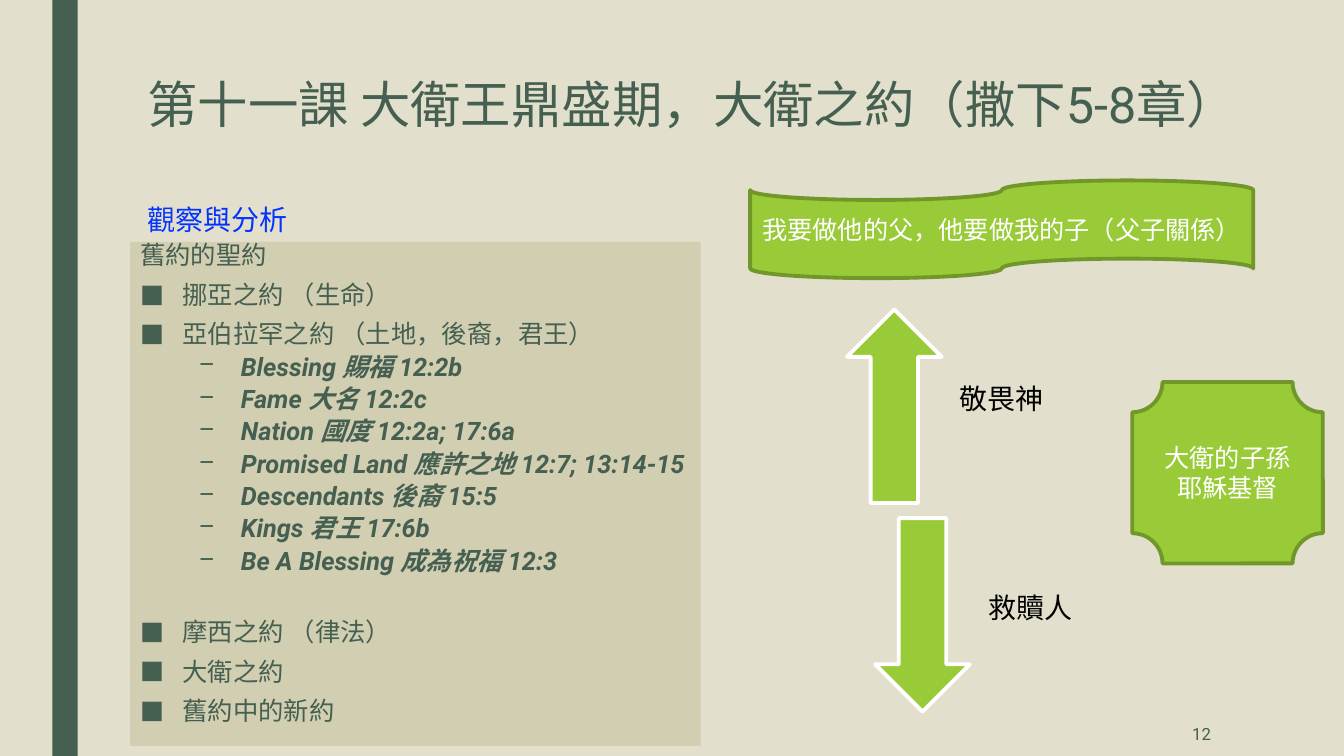
from lxml import etree
from pptx import Presentation
from pptx.dml.color import RGBColor
from pptx.enum.shapes import MSO_SHAPE
from pptx.enum.text import MSO_ANCHOR, MSO_AUTO_SIZE, PP_ALIGN
from pptx.oxml.ns import qn
from pptx.util import Inches, Pt

RECTANGLE, PLAQUE = MSO_SHAPE.RECTANGLE, MSO_SHAPE.PLAQUE
TAPE = MSO_SHAPE.FLOWCHART_PUNCHED_TAPE
UP, DOWN = MSO_SHAPE.UP_ARROW, MSO_SHAPE.DOWN_ARROW
TOP, MIDDLE = MSO_ANCHOR.TOP, MSO_ANCHOR.MIDDLE
LEFT, CENTER, RIGHT = PP_ALIGN.LEFT, PP_ALIGN.CENTER, PP_ALIGN.RIGHT
NO_AUTOFIT = MSO_AUTO_SIZE.NONE

FONT = "Roboto"
COLORS = {
    "background": "E2DFCC", "panel": "D2CEB1", "dark": "455F51",
    "blue": "0432FF", "green": "99CB38", "outline": "719629",
    "white": "FFFFFF", "black": "000000",
}


def add_text(paragraph, text, size, color, alignment=LEFT):
    paragraph.alignment = alignment
    run = paragraph.add_run()
    run.text = text
    run.font.name = FONT
    run.font.size = Pt(size)
    run.font.color.rgb = RGBColor.from_string(COLORS[color])
    return run


def add_filled_shape(kind, box, fill, outline=None):
    shape = slide.shapes.add_shape(kind, *map(Inches, box))
    shape.shadow.inherit = False
    shape.fill.solid()
    shape.fill.fore_color.rgb = RGBColor.from_string(COLORS[fill])
    if outline:
        shape.line.color.rgb = RGBColor.from_string(COLORS[outline])
        shape.line.width = Pt(2.75)
    else:
        shape.line.fill.background()
    return shape


presentation = Presentation()
presentation.slide_width = Inches(13.33)
presentation.slide_height = Inches(7.5)
slide = presentation.slides.add_slide(presentation.slide_layouts[1])

# Background and side bar
slide.background.fill.solid()
slide.background.fill.fore_color.rgb = RGBColor.from_string(COLORS["background"])
add_filled_shape(RECTANGLE, (0.52, 0, 0.25, 7.5), "dark")

# Title and body placeholders
title, body = slide.shapes.title, slide.placeholders[1]
for placeholder, box in ((title, (1.36, 0.75, 11.18, 1.04)),
                         (body, (1.29, 2.4, 5.66, 5))):
    placeholder.left, placeholder.top, placeholder.width, placeholder.height = map(Inches, box)
    placeholder.text_frame.auto_size = NO_AUTOFIT
    placeholder.text_frame.vertical_anchor = TOP
    placeholder.text_frame.word_wrap = True

title_paragraph = title.text_frame.paragraphs[0]
title_paragraph.line_spacing = 0.89
add_text(title_paragraph, "第十一課 大衛王鼎盛期，大衛之約（撒下5-8章）", 36, "dark")

# Covenant list: text, level, bullet, space before
body.fill.solid()
body.fill.fore_color.rgb = RGBColor.from_string(COLORS["panel"])
covenants = [
    ("舊約的聖約", 0, None, 10),
    ("挪亞之約 （生命）", 0, "■", 10),
    ("亞伯拉罕之約 （土地，後裔，君王）", 0, "■", 10),
    ("Blessing 賜福 12:2b", 1, "–", 5),
    ("Fame 大名 12:2c", 1, "–", 5),
    ("Nation 國度 12:2a; 17:6a", 1, "–", 5),
    ("Promised Land 應許之地 12:7; 13:14-15", 1, "–", 5),
    ("Descendants 後裔 15:5", 1, "–", 5),
    ("Kings 君王 17:6b", 1, "–", 5),
    ("Be A Blessing 成為祝福 12:3", 1, "–", 5),
    ("摩西之約 （律法）", 0, "■", 33),
    ("大衛之約", 0, "■", 10),
    ("舊約中的新約", 0, "■", 10),
]
for index, (text, level, bullet, space_before) in enumerate(covenants):
    frame = body.text_frame
    paragraph = frame.add_paragraph() if index else frame.paragraphs[0]
    paragraph.level = level
    paragraph.line_spacing = 0.74
    paragraph.space_before = Pt(space_before)
    paragraph.space_after = Pt(2)
    run = add_text(paragraph, text, 18.1, "dark")
    run.font.bold = run.font.italic = level == 1
    properties = paragraph._p.get_or_add_pPr()
    if bullet:
        properties.set("marL", str(Inches(1 if level else 0.42)))
        properties.set("indent", str(Inches(-0.42)))
        etree.SubElement(properties, qn("a:buFont"), typeface=FONT)
        etree.SubElement(properties, qn("a:buChar"), char=bullet)
    else:
        properties.set("marL", "0")
        properties.set("indent", "0")
        etree.SubElement(properties, qn("a:buNone"))

# Arrows
add_filled_shape(UP, (8.4, 3.07, 0.94, 1.92), "green", "white")
add_filled_shape(DOWN, (8.68, 5.14, 0.94, 1.92), "green", "white")

# Subtitle, arrow labels and slide number: text, box, size, color, alignment, anchor, insets
labels = [
    ("觀察與分析", (1.36, 1.96, 1.98, 0.44), 20, "blue", LEFT, TOP, (0.1, 0.05, 0.1, 0.05)),
    ("敬畏神", (9.36, 3.07, 1.59, 1.92), 20, "black", LEFT, MIDDLE, (0.16, 0, 0.16, 0.16)),
    ("救贖人", (9.64, 5.14, 1.59, 1.92), 20, "black", LEFT, MIDDLE, (0.16, 0, 0.16, 0.16)),
    ("12", (10.36, 7.06, 1.75, 0.44), 12, "dark", RIGHT, MIDDLE, (0.1, 0.05, 0.1, 0.05)),
]
for text, box, size, color, alignment, anchor, insets in labels:
    frame = slide.shapes.add_textbox(*map(Inches, box)).text_frame
    frame.word_wrap = True
    frame.vertical_anchor = anchor
    (frame.margin_left, frame.margin_top,
     frame.margin_right, frame.margin_bottom) = map(Inches, insets)
    add_text(frame.paragraphs[0], text, size, color, alignment)

# Banner and plaque
for kind, box, lines in (
    (TAPE, (7.44, 1.79, 4.99, 0.97), ["我要做他的父，他要做我的子（父子關係）"]),
    (PLAQUE, (11.23, 3.79, 1.89, 1.8), ["大衛的子孫", "耶穌基督"]),
):
    frame = add_filled_shape(kind, box, "green", "outline").text_frame
    frame.word_wrap = True
    frame.vertical_anchor = MIDDLE
    for index, line in enumerate(lines):
        paragraph = frame.add_paragraph() if index else frame.paragraphs[0]
        add_text(paragraph, line, 18, "white", CENTER)

presentation.save("out.pptx")
